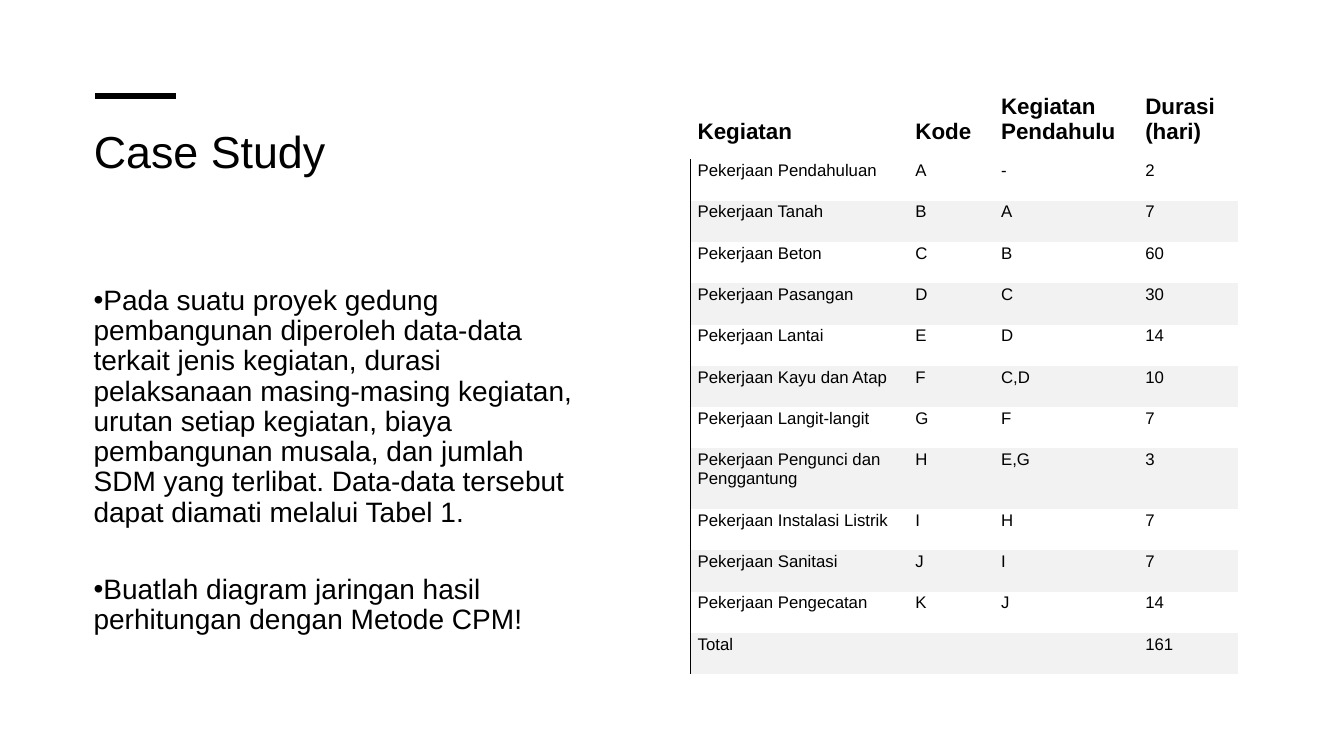
import pptx
import pptx.util
import pptx.dml.color
import pptx.enum.shapes
import pptx.enum.text
import pptx.oxml
import pptx.oxml.ns
from pptx.util import Inches
from lxml import etree

COLORS = {"ink": "000000", "band": "F2F2F2"}
FONT = "Arial"
NO_GRID_STYLE = "{2D5ABB26-0587-4C30-8999-92F81FD0307C}"
TOP = pptx.enum.text.MSO_ANCHOR.TOP
BOTTOM = pptx.enum.text.MSO_ANCHOR.BOTTOM

TASKS = [
    ("Pekerjaan Pendahuluan", "A", "-", "2"),
    ("Pekerjaan Tanah", "B", "A", "7"),
    ("Pekerjaan Beton", "C", "B", "60"),
    ("Pekerjaan Pasangan", "D", "C", "30"),
    ("Pekerjaan Lantai", "E", "D", "14"),
    ("Pekerjaan Kayu dan Atap", "F", "C,D", "10"),
    ("Pekerjaan Langit-langit", "G", "F", "7"),
    ("Pekerjaan Pengunci dan Penggantung", "H", "E,G", "3"),
    ("Pekerjaan Instalasi Listrik", "I", "H", "7"),
    ("Pekerjaan Sanitasi", "J", "I", "7"),
    ("Pekerjaan Pengecatan", "K", "J", "14"),
    ("Total", "", "", "161"),
]
HEADINGS = ("Kegiatan", "Kode", "Kegiatan Pendahulu", "Durasi (hari)")
COLUMN_WIDTHS = (2.16, 0.85, 1.43, 0.99)
HEADER_HEIGHT, ROW_HEIGHT, TALL_ROW_HEIGHT = 0.74, 0.41, 0.6
TALL_TASK_CODE = "H"

BRIEF = [
    "Pada suatu proyek gedung pembangunan diperoleh data-data terkait jenis kegiatan, "
    "durasi pelaksanaan masing-masing kegiatan, urutan setiap kegiatan, biaya pembangunan "
    "musala, dan jumlah SDM yang terlibat. Data-data tersebut dapat diamati melalui Tabel 1.",
    "Buatlah diagram jaringan hasil perhitungan dengan Metode CPM!",
]


def color(name):
    return pptx.dml.color.RGBColor.from_string(COLORS[name])


def write(paragraph, text, size, bold=False, line_spacing=None, before=0, after=0):
    run = paragraph.add_run()
    run.text = text
    run.font.name = FONT
    run.font.size = pptx.util.Pt(size)
    run.font.bold = bold
    run.font.color.rgb = color("ink")
    paragraph.alignment = pptx.enum.text.PP_ALIGN.LEFT
    paragraph.space_before = pptx.util.Pt(before)
    paragraph.space_after = pptx.util.Pt(after)
    if line_spacing:
        paragraph.line_spacing = line_spacing


def prepare_frame(shape):
    frame = shape.text_frame
    frame.word_wrap = True
    frame.auto_size = pptx.enum.text.MSO_AUTO_SIZE.NONE
    frame.vertical_anchor = TOP
    return frame


def add_bullet(paragraph):
    properties = paragraph._p.get_or_add_pPr()
    properties.set("marL", "0")
    properties.set("indent", str(-Inches(0.25)))
    font = etree.SubElement(properties, pptx.oxml.ns.qn("a:buFont"))
    font.set("typeface", FONT)
    bullet = etree.SubElement(properties, pptx.oxml.ns.qn("a:buChar"))
    bullet.set("char", "•")


def add_left_border(cell):
    cell._tc.get_or_add_tcPr().insert(0, pptx.oxml.parse_xml(
        f'<a:lnL {pptx.oxml.ns.nsdecls("a")} w="{pptx.util.Pt(0.75)}"><a:solidFill>'
        f'<a:srgbClr val="{COLORS["ink"]}"/></a:solidFill></a:lnL>'))


def place_title(slide, left, top, width, height):
    title = slide.shapes.title
    title.left, title.top = Inches(left), Inches(top)
    title.width, title.height = Inches(width), Inches(height)
    write(prepare_frame(title).paragraphs[0], "Case Study", 32, line_spacing=0.9)

    rule_left, rule_top = Inches(left + 0.11), Inches(top - 0.29)
    rule = slide.shapes.add_connector(
        pptx.enum.shapes.MSO_CONNECTOR.STRAIGHT,
        rule_left, rule_top, rule_left + Inches(0.81), rule_top)
    rule.line.color.rgb = color("ink")
    rule.line.width = pptx.util.Pt(4.5)
    etree.SubElement(rule.element.spPr, pptx.oxml.ns.qn("a:effectLst"))


def place_brief(slide, left, top, width, height):
    box = slide.shapes.add_textbox(Inches(left), Inches(top), Inches(width), Inches(height))
    frame = prepare_frame(box)
    for index, text in enumerate(BRIEF):
        paragraph = frame.add_paragraph() if index else frame.paragraphs[0]
        write(paragraph, text, 20, line_spacing=0.9, before=27.6 if index else 0, after=6)
        add_bullet(paragraph)


def format_cell(cell, text, is_header, is_banded):
    if is_banded:
        cell.fill.solid()
        cell.fill.fore_color.rgb = color("band")
    else:
        cell.fill.background()
    if text:
        cell.margin_left, cell.margin_top = Inches(0.07), Inches(0.02)
        cell.margin_right, cell.margin_bottom = Inches(0.1), Inches(0.15)
        cell.vertical_anchor = BOTTOM if is_header else TOP
        write(cell.text_frame.paragraphs[0], text, 16 if is_header else 12, bold=is_header)


def place_schedule(slide, left, top, width, height):
    rows = [HEADINGS] + TASKS
    frame = slide.shapes.add_table(
        len(rows), len(HEADINGS), Inches(left), Inches(top), Inches(width), Inches(height))
    table = frame.table
    table.horz_banding = False
    frame.element.find(".//" + pptx.oxml.ns.qn("a:tableStyleId")).text = NO_GRID_STYLE
    for column, column_width in zip(table.columns, COLUMN_WIDTHS):
        column.width = Inches(column_width)
    for row_index, values in enumerate(rows):
        is_header = row_index == 0
        row_height = TALL_ROW_HEIGHT if values[1] == TALL_TASK_CODE else ROW_HEIGHT
        table.rows[row_index].height = Inches(HEADER_HEIGHT if is_header else row_height)
        for column_index, text in enumerate(values):
            is_banded = not is_header and row_index % 2 == 0
            format_cell(table.cell(row_index, column_index), text, is_header, is_banded)
        if not is_header:
            add_left_border(table.cell(row_index, 0))


def main():
    presentation = pptx.Presentation()
    presentation.slide_width, presentation.slide_height = Inches(13.33), Inches(7.5)
    slide = presentation.slides.add_slide(presentation.slide_layouts[5])
    place_title(slide, 0.83, 1.24, 4.97, 1.53)
    place_brief(slide, 0.83, 2.79, 4.97, 3.94)
    place_schedule(slide, 6.85, 0.84, 5.43, 5.81)
    presentation.save("out.pptx")


if __name__ == "__main__":
    main()
